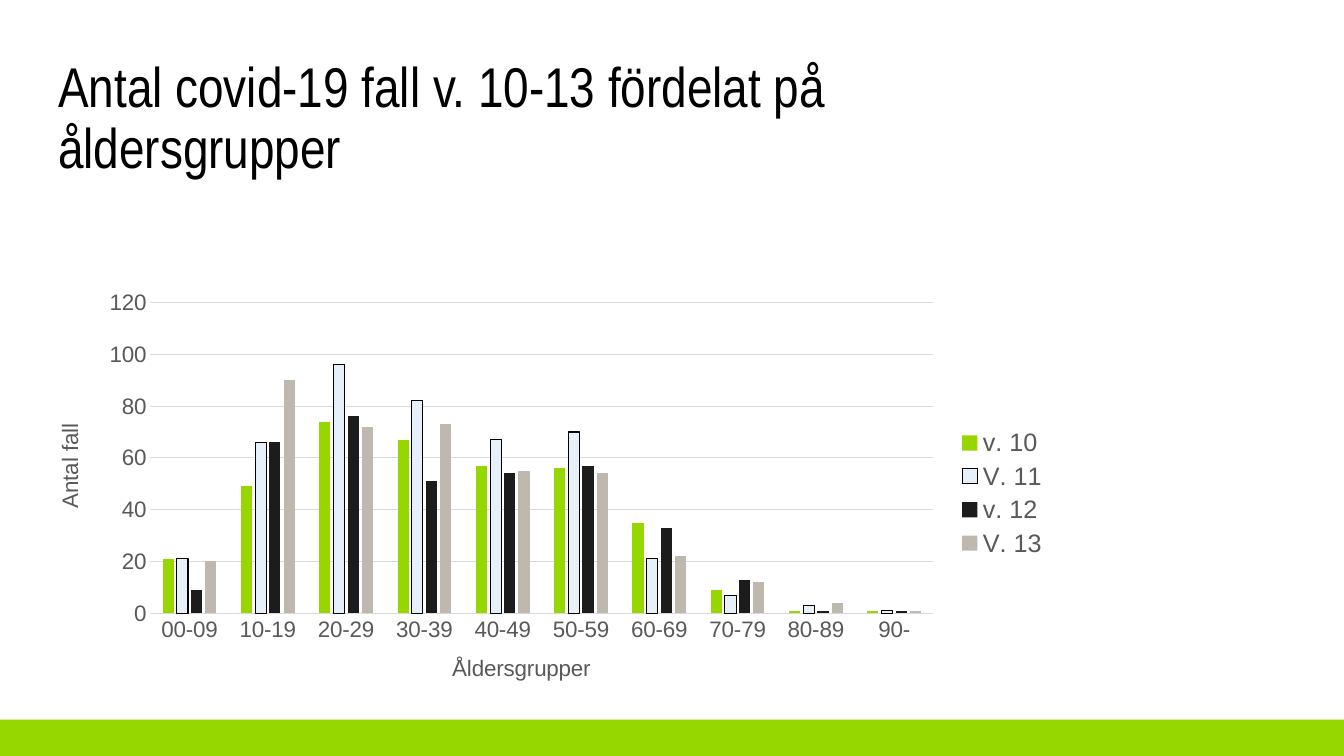
from dataclasses import dataclass
from typing import Optional

from pptx import Presentation
from pptx.chart.data import CategoryChartData
from pptx.dml.color import RGBColor
from pptx.enum.chart import XL_CHART_TYPE, XL_LEGEND_POSITION, XL_TICK_MARK
from pptx.enum.shapes import MSO_SHAPE
from pptx.enum.text import MSO_ANCHOR, PP_ALIGN
from pptx.util import Pt

COLUMNS = XL_CHART_TYPE.COLUMN_CLUSTERED
LEGEND_RIGHT = XL_LEGEND_POSITION.RIGHT
NO_TICK = XL_TICK_MARK.NONE
RECTANGLE = MSO_SHAPE.RECTANGLE
TOP = MSO_ANCHOR.TOP
LEFT = PP_ALIGN.LEFT

BLACK = RGBColor(0x00, 0x00, 0x00)
GREEN = RGBColor(0x97, 0xD7, 0x00)
PALE_BLUE = RGBColor(0xE6, 0xF0, 0xF9)
CHARCOAL = RGBColor(0x1C, 0x1C, 0x1C)
TAUPE = RGBColor(0xBF, 0xB8, 0xAF)
LABEL_GREY = RGBColor(0x59, 0x59, 0x59)
GRID_GREY = RGBColor(0xD9, 0xD9, 0xD9)

SLIDE_WIDTH, SLIDE_HEIGHT = Pt(960), Pt(540)
FOOTER_TOP = Pt(514)
HAIRLINE = Pt(0.75)
AGE_GROUPS = [f"{start:02d}-{start + 9:02d}" for start in range(0, 90, 10)] + ["90-"]


@dataclass(frozen=True)
class Week:
    name: str
    cases: tuple[int, ...]
    color: RGBColor
    outline: Optional[RGBColor] = None


WEEKS = [
    Week("v. 10", (21, 49, 74, 67, 57, 56, 35, 9, 1, 1), GREEN),
    Week("V. 11", (21, 66, 96, 82, 67, 70, 21, 7, 3, 1), PALE_BLUE, BLACK),
    Week("v. 12", (9, 66, 76, 51, 54, 57, 33, 13, 1, 1), CHARCOAL),
    Week("V. 13", (20, 90, 72, 73, 55, 54, 22, 12, 4, 1), TAUPE),
]


def style_font(font, size: float, color: RGBColor, name: str = "Arial") -> None:
    font.name = name
    font.size = Pt(size)
    font.bold = False
    font.color.rgb = color


def style_line(line, color: Optional[RGBColor]) -> None:
    if color is None:
        line.fill.background()
    else:
        line.color.rgb = color
        line.width = HAIRLINE


def style_axis(axis, title: str, line_color: Optional[RGBColor]) -> None:
    axis.major_tick_mark = axis.minor_tick_mark = NO_TICK
    style_font(axis.tick_labels.font, 16, LABEL_GREY)
    style_line(axis.format.line, line_color)
    heading = axis.axis_title.text_frame
    heading.text = title
    style_font(heading.paragraphs[0].runs[0].font, 16, LABEL_GREY)


def add_footer_band(slide) -> None:
    band = slide.shapes.add_shape(
        RECTANGLE, 0, FOOTER_TOP, SLIDE_WIDTH, SLIDE_HEIGHT - FOOTER_TOP)
    band.shadow.inherit = False
    band.fill.solid()
    band.fill.fore_color.rgb = GREEN
    band.line.fill.background()


def add_title(slide, title: str) -> None:
    frame = slide.shapes.add_textbox(Pt(34.5), Pt(39), Pt(643), Pt(51)).text_frame
    frame.word_wrap = True
    frame.vertical_anchor = TOP
    frame.text = title
    paragraph = frame.paragraphs[0]
    paragraph.alignment = LEFT
    paragraph.line_spacing = 0.9
    style_font(paragraph.runs[0].font, 40, BLACK, "Arial Narrow")


def add_case_chart(slide) -> None:
    case_data = CategoryChartData()
    case_data.categories = AGE_GROUPS
    for week in WEEKS:
        case_data.add_series(week.name, week.cases)
    chart = slide.shapes.add_chart(
        COLUMNS, Pt(24), Pt(201.5), Pt(732), Pt(301.5), case_data).chart
    style_font(chart.font, 16, BLACK)
    chart.has_title = False

    chart.has_legend = True
    chart.legend.position = LEGEND_RIGHT
    chart.legend.include_in_layout = False
    style_font(chart.legend.font, 18, LABEL_GREY)

    style_axis(chart.category_axis, "Åldersgrupper", GRID_GREY)
    case_axis = chart.value_axis
    style_axis(case_axis, "Antal fall", None)
    case_axis.minimum_scale, case_axis.maximum_scale = 0, 120
    case_axis.major_unit = 20
    case_axis.has_major_gridlines = True
    style_line(case_axis.major_gridlines.format.line, GRID_GREY)

    plot = chart.plots[0]
    plot.vary_by_categories = False
    plot.gap_width = 219
    plot.overlap = -27
    for week, columns in zip(WEEKS, plot.series):
        columns.format.fill.solid()
        columns.format.fill.fore_color.rgb = week.color
        style_line(columns.format.line, week.outline)


def main() -> None:
    presentation = Presentation()
    presentation.slide_width = SLIDE_WIDTH
    presentation.slide_height = SLIDE_HEIGHT
    slide = presentation.slides.add_slide(presentation.slide_layouts[6])
    add_footer_band(slide)
    add_title(slide, "Antal covid-19 fall v. 10-13 fördelat på åldersgrupper")
    add_case_chart(slide)
    presentation.save("out.pptx")


if __name__ == "__main__":
    main()
